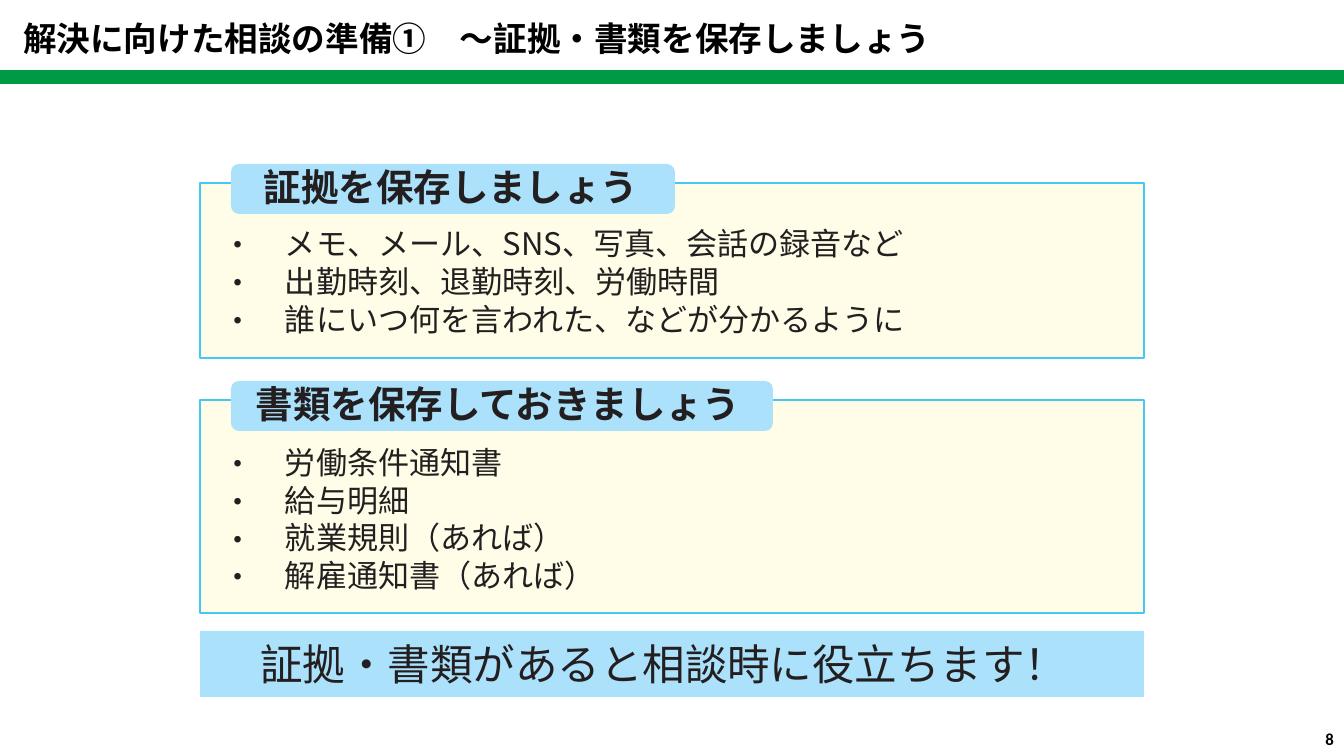
from lxml.etree import SubElement
from pptx import Presentation
from pptx.dml.color import RGBColor
from pptx.enum.shapes import MSO_SHAPE
from pptx.enum.text import MSO_ANCHOR, PP_ALIGN
from pptx.oxml.ns import qn
from pptx.util import Emu, Pt

TITLE = "解決に向けた相談の準備①\u3000～証拠・書類を保存しましょう"
PANELS = [
    {
        "heading": "証拠を保存しましょう",
        "items": [
            "メモ、メール、SNS、写真、会話の録音など",
            "出勤時刻、退勤時刻、労働時間",
            "誰にいつ何を言われた、などが分かるように",
        ],
        "top": 183, "height": 175, "tab_width": 444,
        "heading_indent": 42, "gap": 11.2,
    },
    {
        "heading": "書類を保存しておきましょう",
        "items": ["労働条件通知書", "給与明細", "就業規則（あれば）", "解雇通知書（あれば）"],
        "top": 400, "height": 213, "tab_width": 542,
        "heading_indent": 34, "gap": 12.4,
    },
]
CONCLUSION = "証拠・書類があると相談時に役立ちます！"
PAGE_NUMBER = "8"

COLORS = {
    "green": "009944", "sky": "ABE1FA", "cream": "FFFDE8",
    "border": "44C8F4", "ink": "231F20", "black": "000000",
}
JAPANESE_FONT = "Noto Sans CJK JP"
SLIDE_WIDTH, SLIDE_HEIGHT = 1344, 756
PANEL_LEFT, PANEL_WIDTH = 200, 944
TAB_LEFT, TAB_HEIGHT, TAB_RISE = 231, 50, 19
TEXT_LEFT, TEXT_WIDTH = 222, 766
BULLET_INDENT = 62


def px(length):
    return Emu(round(length * 914400 / 100.8))


def rgb(name):
    return RGBColor.from_string(COLORS[name])


def add_block(kind, left, top, width, height, fill, line=None):
    shape = slide.shapes.add_shape(kind, px(left), px(top), px(width), px(height))
    shape.shadow.inherit = False
    shape.fill.solid()
    shape.fill.fore_color.rgb = rgb(fill)
    if line:
        shape.line.color.rgb = rgb(line)
        shape.line.width = Pt(1.25)
    else:
        shape.line.fill.background()
    return shape


def set_frame(shape, margins=(10, 5, 10, 5), anchor=MSO_ANCHOR.TOP):
    """Set wrapping, anchor and margins (left, top, right, bottom)."""
    frame = shape.text_frame
    frame.word_wrap = True
    frame.vertical_anchor = anchor
    (frame.margin_left, frame.margin_top,
     frame.margin_right, frame.margin_bottom) = map(px, margins)
    return frame


def add_text_box(left, top, width, height, **frame_options):
    box = slide.shapes.add_textbox(px(left), px(top), px(width), px(height))
    return set_frame(box, **frame_options)


def write(paragraph, text, size, color, bold=False, font=JAPANESE_FONT,
          align=PP_ALIGN.LEFT, indent=0, space_before=0, bullet=None):
    paragraph.text = text
    paragraph.alignment = align
    paragraph.space_before = Pt(space_before)
    paragraph.font.size = Pt(size)
    paragraph.font.bold = bold
    paragraph.font.color.rgb = rgb(color)
    paragraph.font.name = font
    for run in paragraph.runs:
        run.font.name = font
        SubElement(run.font._element, qn("a:ea"), typeface=font)
    properties = paragraph._p.get_or_add_pPr()
    properties.set("marL", str(px(indent)))
    if bullet:
        properties.set("indent", str(-px(BULLET_INDENT)))
        mark_font = properties.makeelement(qn("a:buFont"), {"typeface": font})
        mark = properties.makeelement(qn("a:buChar"), {"char": bullet})
        defaults = properties.find(qn("a:defRPr"))
        defaults.addprevious(mark_font)
        defaults.addprevious(mark)


def add_panel(panel):
    top = panel["top"]
    add_block(MSO_SHAPE.RECTANGLE, PANEL_LEFT, top, PANEL_WIDTH, panel["height"],
              "cream", "border")
    tab = add_block(MSO_SHAPE.ROUNDED_RECTANGLE, TAB_LEFT, top - TAB_RISE,
                    panel["tab_width"], TAB_HEIGHT, "sky")
    tab.adjustments[0] = 0.16
    frame = add_text_box(TEXT_LEFT, top - 39, TEXT_WIDTH, panel["height"] + 20,
                         margins=(0, 20, 0, 0))
    write(frame.paragraphs[0], panel["heading"], 26.8, "ink", bold=True,
          indent=panel["heading_indent"])
    for index, item in enumerate(panel["items"]):
        write(frame.add_paragraph(), item, 22.2, "ink", indent=BULLET_INDENT + 1,
              space_before=0.3 if index else panel["gap"], bullet="・")


presentation = Presentation()
presentation.slide_width = px(SLIDE_WIDTH)
presentation.slide_height = px(SLIDE_HEIGHT)
slide = presentation.slides.add_slide(presentation.slide_layouts[6])

add_block(MSO_SHAPE.RECTANGLE, 0, 70, SLIDE_WIDTH, 14, "green")
title = add_text_box(13, 13, 992, 50)
write(title.paragraphs[0], TITLE, 24, "black", bold=True)

for panel in PANELS:
    add_panel(panel)

banner = add_block(MSO_SHAPE.RECTANGLE, PANEL_LEFT, 631, PANEL_WIDTH, 66, "sky")
banner_text = set_frame(banner, margins=(0, 7, 0, 7))
write(banner_text.paragraphs[0], CONCLUSION, 30.4, "ink", indent=60)

number = add_text_box(1030, 719, 314, 40, anchor=MSO_ANCHOR.MIDDLE)
write(number.paragraphs[0], PAGE_NUMBER, 12, "black", bold=True, font="Calibri",
      align=PP_ALIGN.RIGHT)

presentation.save("out.pptx")
